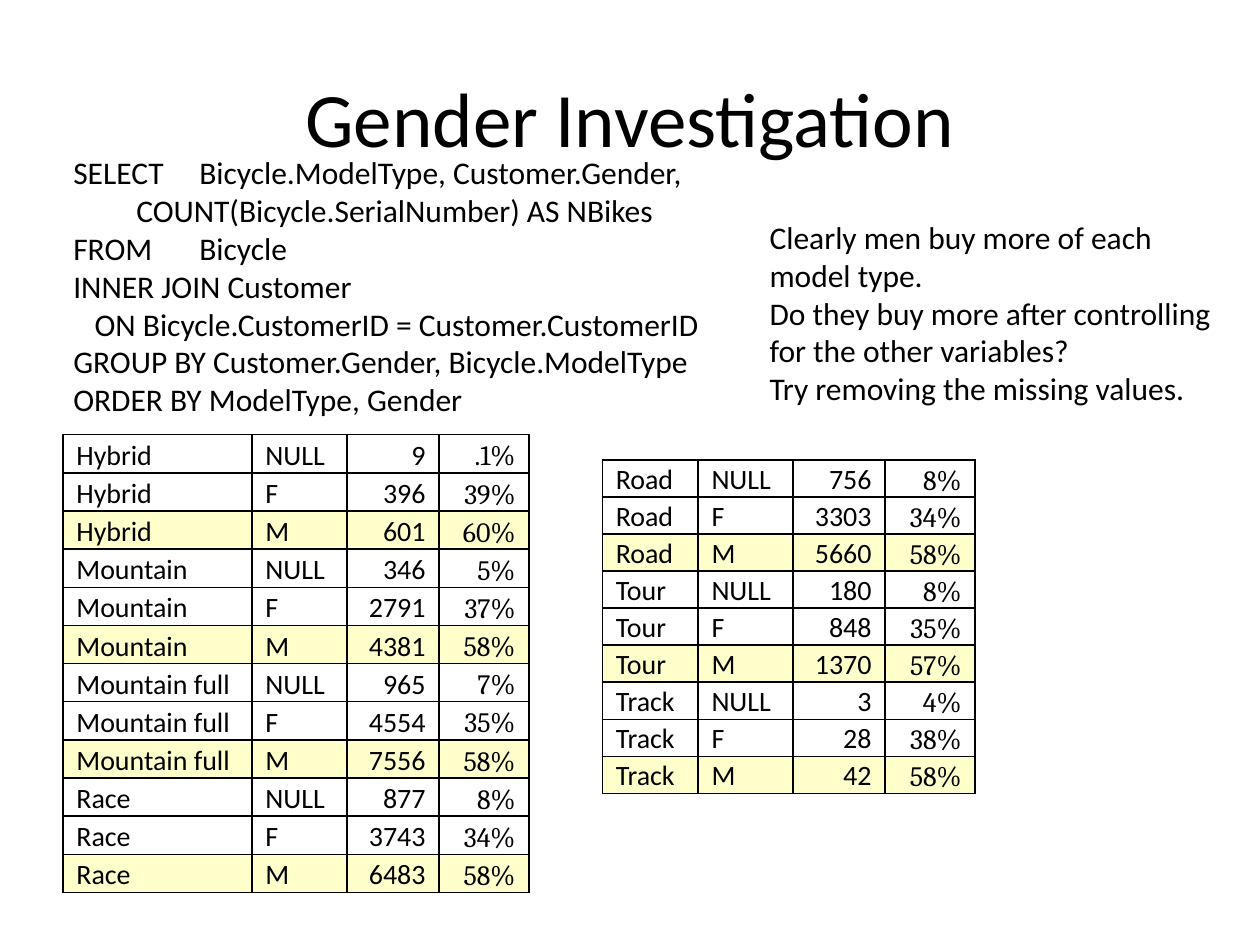
from dataclasses import dataclass

from lxml.etree import SubElement
from pptx import Presentation
from pptx.dml.color import RGBColor
from pptx.enum.text import MSO_ANCHOR, PP_ALIGN
from pptx.oxml.ns import qn
from pptx.util import Pt

COLORS = {"ink": "000000", "male": "FFFFCC"}
BODY_FONT, PERCENT_FONT = "Calibri", "Cambria"
GENDERS = ("NULL", "F", "M")


@dataclass
class TextBlock:
    left: float
    top: float
    width: float
    height: float
    lines: list[str]
    size: float = 18
    align: PP_ALIGN = PP_ALIGN.LEFT
    anchor: MSO_ANCHOR = MSO_ANCHOR.TOP


@dataclass
class ModelType:
    name: str
    counts: tuple[int, int, int]  # in the order of GENDERS
    shares: tuple[str, str, str]


@dataclass
class ResultTable:
    left: float
    top: float
    name_width: float
    row_height: float
    models: list[ModelType]


TITLE = TextBlock(36, 21.6, 648, 90, ["Gender Investigation"], 44,
                  PP_ALIGN.CENTER, MSO_ANCHOR.MIDDLE)
QUERY = TextBlock(34.8, 84.2, 401.8, 160, [
    "SELECT\tBicycle.ModelType, Customer.Gender,",
    "\tCOUNT(Bicycle.SerialNumber) AS NBikes",
    "FROM \tBicycle",
    "INNER JOIN Customer",
    "ON Bicycle.CustomerID = Customer.CustomerID",
    "GROUP BY Customer.Gender, Bicycle.ModelType",
    "ORDER BY ModelType, Gender",
])
COMMENT = TextBlock(432.7, 121, 268.6, 116.6, [
    "Clearly men buy more of each model type.",
    "Do they buy more after controlling for the other variables?",
    "Try removing the missing values.",
])
TABLES = [
    ResultTable(36, 248.4, 108, 21.8, [
        ModelType("Hybrid", (9, 396, 601), (".1%", "39%", "60%")),
        ModelType("Mountain", (346, 2791, 4381), ("5%", "37%", "58%")),
        ModelType("Mountain full", (965, 4554, 7556), ("7%", "35%", "58%")),
        ModelType("Race", (877, 3743, 6483), ("8%", "34%", "58%")),
    ]),
    ResultTable(344.2, 262.8, 54.7, 21.2, [
        ModelType("Road", (756, 3303, 5660), ("8%", "34%", "58%")),
        ModelType("Tour", (180, 848, 1370), ("8%", "35%", "57%")),
        ModelType("Track", (3, 28, 42), ("4%", "38%", "58%")),
    ]),
]


def add_run(p, text: str, size: float, font: str = BODY_FONT) -> None:
    r = p.add_run()
    r.text = text
    r.font.size = Pt(size)
    r.font.name = font
    r.font.color.rgb = RGBColor.from_string(COLORS["ink"])


def add_text(s, block: TextBlock) -> None:
    sp = s.shapes.add_textbox(Pt(block.left), Pt(block.top),
                              Pt(block.width), Pt(block.height))
    tf = sp.text_frame
    tf.word_wrap = True
    tf.vertical_anchor = block.anchor
    for i, line in enumerate(block.lines):
        p = tf.add_paragraph() if i else tf.paragraphs[0]
        p.alignment = block.align
        if line.startswith("ON "):  # join condition sits under its JOIN
            p._p.get_or_add_pPr().set("marL", str(Pt(12.2)))
        add_run(p, line, block.size)


def add_borders(cell) -> None:
    tcPr = cell._tc.get_or_add_tcPr()
    for side in ("a:lnL", "a:lnR", "a:lnT", "a:lnB"):
        ln = SubElement(tcPr, qn(side), w=str(Pt(1)))
        fill = SubElement(ln, qn("a:solidFill"))
        SubElement(fill, qn("a:srgbClr"), val=COLORS["ink"])


def fill_cell(cell, text: str, column: int, highlight: bool) -> None:
    cell.margin_left = cell.margin_right = Pt(7.7)
    cell.margin_top = cell.margin_bottom = 0
    cell.vertical_anchor = MSO_ANCHOR.BOTTOM
    add_borders(cell)
    if highlight:
        cell.fill.solid()
        cell.fill.fore_color.rgb = RGBColor.from_string(COLORS["male"])
    else:
        cell.fill.background()
    p = cell.text_frame.paragraphs[0]
    p.alignment = PP_ALIGN.RIGHT if column >= 2 else PP_ALIGN.LEFT
    add_run(p, text, 16, PERCENT_FONT if column == 3 else BODY_FONT)


def add_results(s, result: ResultTable) -> None:
    rows = [(m.name, gender, str(count), share) for m in result.models
            for gender, count, share in zip(GENDERS, m.counts, m.shares)]
    widths = (result.name_width, 54.2, 52.6, 51.4)
    table = s.shapes.add_table(len(rows), len(widths), Pt(result.left), Pt(result.top),
                               Pt(sum(widths)), Pt(result.row_height * len(rows))).table
    table.first_row = table.horz_banding = False
    for column, width in zip(table.columns, widths):
        column.width = Pt(width)
    for i, row in enumerate(rows):
        table.rows[i].height = Pt(result.row_height)
        for j, text in enumerate(row):
            fill_cell(table.cell(i, j), text, j, highlight=row[1] == "M")


def main() -> None:
    prs = Presentation()
    prs.slide_width, prs.slide_height = Pt(720), Pt(540)
    s = prs.slides.add_slide(prs.slide_layouts[6])

    # Title, query and comment
    for block in (TITLE, QUERY, COMMENT):
        add_text(s, block)

    # Query results, split over two tables
    for result in TABLES:
        add_results(s, result)

    prs.save("out.pptx")


if __name__ == "__main__":
    main()
